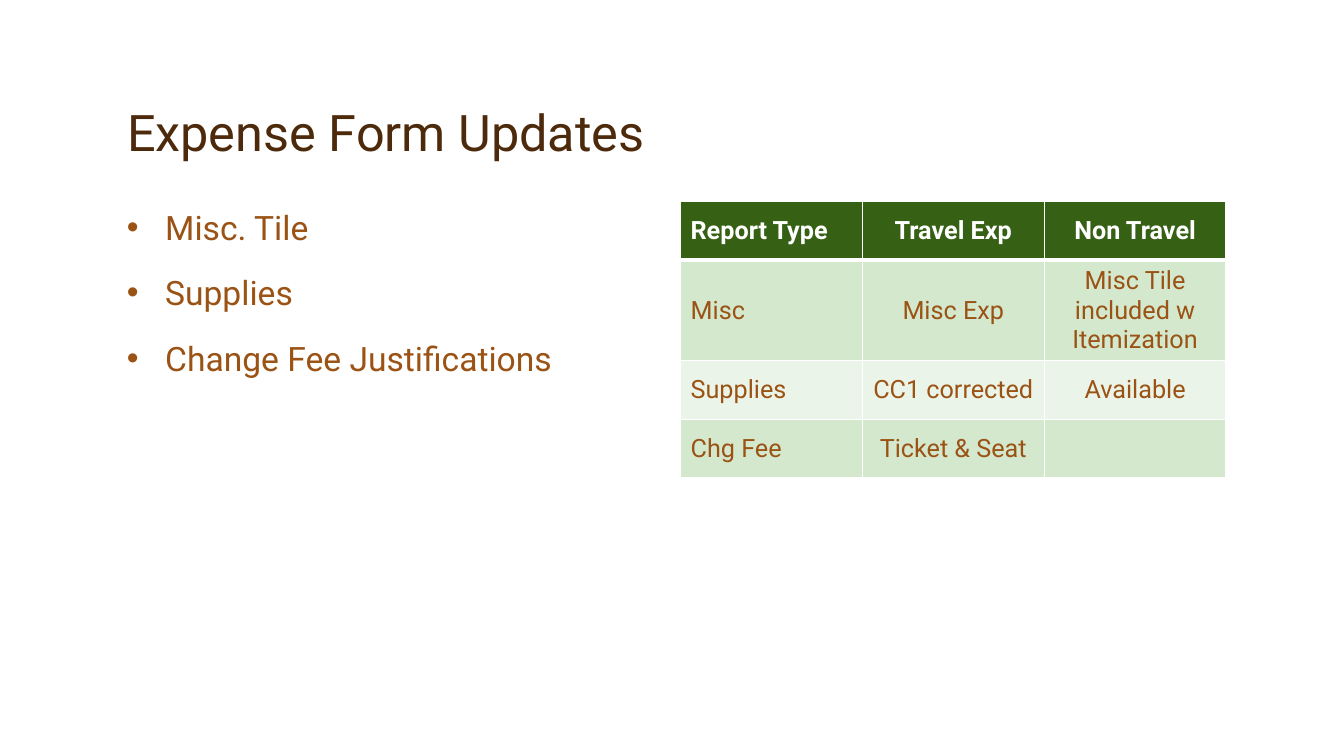
from dataclasses import dataclass

import pptx
import pptx.dml.color
import pptx.enum.text
import pptx.oxml
import pptx.oxml.ns
import pptx.util
from pptx.util import Inches

ALIGN = pptx.enum.text.PP_ALIGN
ANCHOR = pptx.enum.text.MSO_ANCHOR


@dataclass(frozen=True)
class Theme:
    font: str = "Roboto"
    title_color: str = "4D2A0B"
    text_color: str = "9A5315"
    white: str = "FFFFFF"
    header_fill: str = "366013"
    band_fills: tuple = ("D4E8CD", "EBF4E8")
    title_size: int = 36
    bullet_size: int = 24
    table_size: int = 18


THEME = Theme()
TOPICS = ["Misc. Tile", "Supplies", "Change Fee Justifications"]
REPORT_ROWS = [
    ["Report Type", "Travel Exp", "Non Travel"],
    ["Misc", "Misc Exp", "Misc Tile included w Itemization"],
    ["Supplies", "CC1 corrected", "Available"],
    ["Chg Fee", "Ticket & Seat", ""],
]


def rgb(color):
    return pptx.dml.color.RGBColor.from_string(color)


def style_font(para, size, color, bold=False):
    para.font.name = THEME.font
    para.font.size = pptx.util.Pt(size)
    para.font.bold = bold
    para.font.color.rgb = rgb(color)


def set_title(page, text):
    title = page.shapes.title
    title.left, title.top = Inches(1.16), Inches(0.33)
    title.width, title.height = Inches(11), Inches(1.33)
    frame = title.text_frame
    frame.text = text
    frame.auto_size = pptx.enum.text.MSO_AUTO_SIZE.NONE
    frame.vertical_anchor = ANCHOR.BOTTOM
    para = frame.paragraphs[0]
    para.alignment = ALIGN.LEFT
    para.line_spacing = 0.9
    style_font(para, THEME.title_size, THEME.title_color)


def add_bullet(para):
    properties = para._p.get_or_add_pPr()
    properties.set("marL", str(Inches(0.38)))
    properties.set("indent", str(Inches(-0.38)))
    namespace = pptx.oxml.ns.nsdecls("a")
    properties.append(pptx.oxml.parse_xml(f'<a:buFont {namespace} typeface="Arial"/>'))
    properties.append(pptx.oxml.parse_xml(f'<a:buChar {namespace} char="•"/>'))


def add_bullet_list(page, items):
    box = page.shapes.add_textbox(Inches(1.16), Inches(2), Inches(5.42), Inches(4.58))
    frame = box.text_frame
    frame.word_wrap = True
    for index, item in enumerate(items):
        para = frame.add_paragraph() if index else frame.paragraphs[0]
        para.text = item
        if index:
            para.space_before = pptx.util.Pt(18)
        add_bullet(para)
        style_font(para, THEME.bullet_size, THEME.text_color)


def set_border(cell, side, width):
    namespace = pptx.oxml.ns.nsdecls("a")
    cell._tc.get_or_add_tcPr().append(pptx.oxml.parse_xml(
        f'<a:ln{side} {namespace} w="{pptx.util.Pt(width)}"><a:solidFill>'
        f'<a:srgbClr val="{THEME.white}"/></a:solidFill></a:ln{side}>'))


def fill_cell(cell, text, row, column):
    is_header = row == 0
    # Borders come before the fill; a thick rule separates the header
    for side in "LRTB":
        thick = (side == "B" and row == 0) or (side == "T" and row == 1)
        set_border(cell, side, 3 if thick else 1)
    cell.fill.solid()
    cell.fill.fore_color.rgb = rgb(
        THEME.header_fill if is_header else THEME.band_fills[(row - 1) % 2])
    cell.vertical_anchor = ANCHOR.MIDDLE
    cell.text = text
    para = cell.text_frame.paragraphs[0]
    para.alignment = ALIGN.CENTER if column else ALIGN.LEFT
    style_font(para, THEME.table_size,
               THEME.white if is_header else THEME.text_color, is_header)


def add_report_table(page, rows):
    row_height = Inches(0.58)
    table = page.shapes.add_table(
        len(rows), len(rows[0]), Inches(6.75), Inches(2),
        Inches(5.41), row_height * len(rows)).table
    for row, texts in enumerate(rows):
        for column, text in enumerate(texts):
            fill_cell(table.cell(row, column), text, row, column)


def main():
    deck = pptx.Presentation()
    deck.slide_width, deck.slide_height = Inches(13.33), Inches(7.5)
    page = deck.slides.add_slide(deck.slide_layouts[5])

    # Heading, topics on the left, report types on the right
    set_title(page, "Expense Form Updates")
    add_bullet_list(page, TOPICS)
    add_report_table(page, REPORT_ROWS)

    deck.save("out.pptx")


if __name__ == "__main__":
    main()
